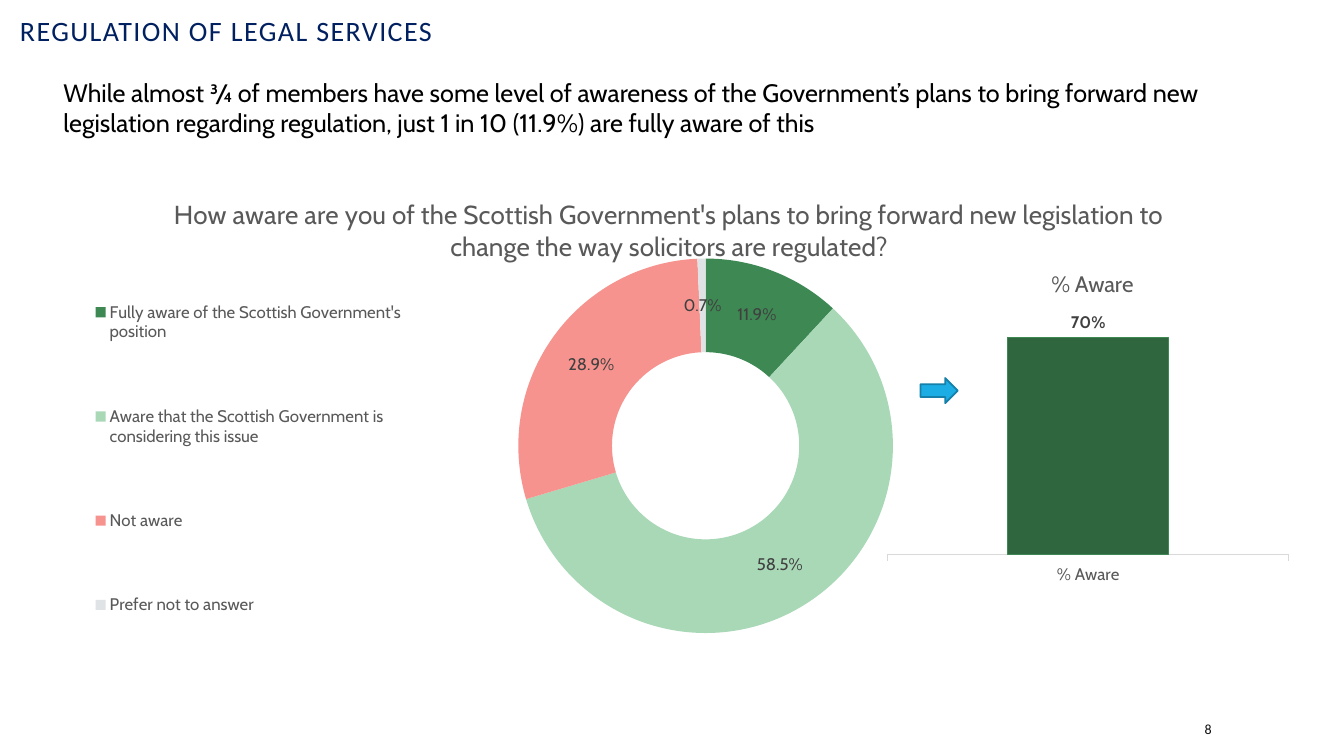
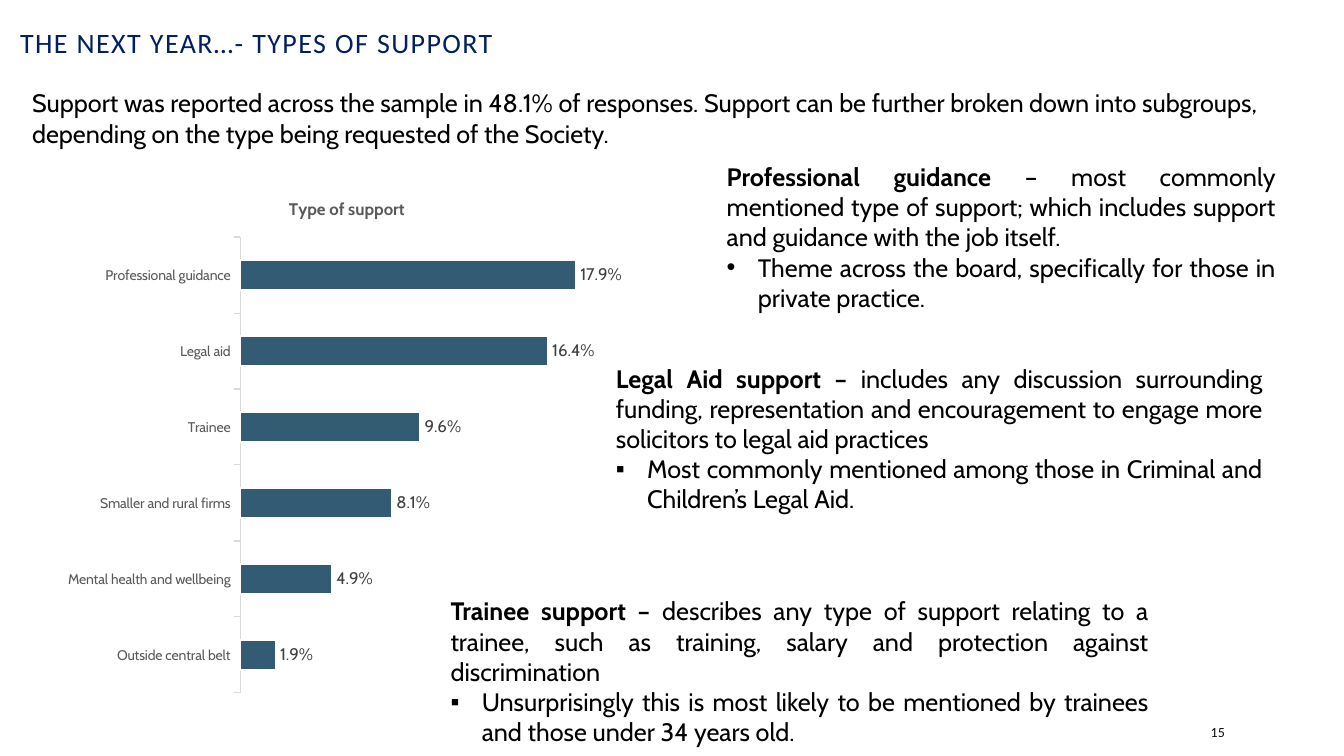
from lxml.etree import SubElement
from pptx import Presentation
from pptx.chart.data import CategoryChartData
from pptx.dml.color import RGBColor
from pptx.enum.chart import XL_CHART_TYPE, XL_LABEL_POSITION, XL_LEGEND_POSITION, XL_TICK_MARK
from pptx.enum.shapes import MSO_SHAPE
from pptx.enum.text import MSO_ANCHOR, PP_ALIGN
from pptx.oxml import parse_xml
from pptx.oxml.ns import nsdecls, qn
from pptx.util import Inches, Pt

NAVY = "002060"
BLACK = "000000"
NEAR_BLACK = "0D0D0D"
GREY = "595959"
LABEL_GREY = "404040"
AXIS_GREY = "D9D9D9"
GREEN = "3E8853"
DARK_GREEN = "2F663E"
PALE_GREEN = "A9D8B7"
CORAL = "F6938E"
PALE_GREY = "DFE3E5"
STEEL = "335B74"
SKY = "1CADE4"
DARK_SKY = "1580A9"
WHITE = "FFFFFF"

TITLE_STYLE = {"name": "Calibri", "size": Pt(20), "color": NAVY}
BODY_STYLE = {"name": "Cabin", "size": Pt(18), "color": BLACK}
NUMBER_STYLE = {"name": "Calibri", "size": Pt(10), "color": NEAR_BLACK}
INDENT = Inches(0.31)


def rgb(value):
    return RGBColor.from_string(value)


def apply_font(font, style):
    for attribute, value in style.items():
        if attribute == "color":
            font.color.rgb = rgb(value)
        else:
            setattr(font, attribute, value)


def chart_style(size, color=GREY, bold=False):
    return {"name": "Cabin", "size": Pt(size), "color": color, "bold": bold}


def paint(target, fill, line=None, width=0.75):
    target.fill.solid()
    target.fill.fore_color.rgb = rgb(fill)
    if line:
        target.line.color.rgb = rgb(line)
        target.line.width = Pt(width)


def add_text_box(slide, box, anchor=MSO_ANCHOR.TOP):
    frame = slide.shapes.add_textbox(*map(Inches, box)).text_frame
    frame.word_wrap = True
    frame.vertical_anchor = anchor
    return frame


def add_run(paragraph, text, style):
    run = paragraph.add_run()
    run.text = text
    apply_font(run.font, style)
    return run


def add_title(slide, text, box):
    paragraph = add_text_box(slide, box, MSO_ANCHOR.MIDDLE).paragraphs[0]
    paragraph.line_spacing = 0.8
    run = add_run(paragraph, text, TITLE_STYLE)
    run._r.get_or_add_rPr().set("spc", "100")


def add_summary(slide, text, box):
    add_run(add_text_box(slide, box).paragraphs[0], text, BODY_STYLE)


def add_number(slide, text, left, top):
    frame = add_text_box(slide, (left, top, 1.06, 0.3), MSO_ANCHOR.MIDDLE)
    add_run(frame.paragraphs[0], text, NUMBER_STYLE)


def add_theme(slide, box, heading, description, bullet, detail):
    frame = add_text_box(slide, box)
    intro = frame.paragraphs[0]
    add_run(intro, heading, {**BODY_STYLE, "bold": True})
    add_run(intro, description, BODY_STYLE)
    item = frame.add_paragraph()
    properties = item._p.get_or_add_pPr()
    properties.set("marL", str(INDENT))
    properties.set("indent", str(-INDENT))
    SubElement(properties, qn("a:buFont")).set("typeface", "Arial")
    SubElement(properties, qn("a:buChar")).set("char", bullet)
    add_run(item, detail, BODY_STYLE)
    for paragraph in frame.paragraphs:
        paragraph.alignment = PP_ALIGN.JUSTIFY


def set_layout(element, index, inner=False, **values):
    for layout in element.findall(qn("c:layout")):
        element.remove(layout)
    target = '<c:layoutTarget val="inner"/>' if inner else ""
    modes = '<c:xMode val="edge"/><c:yMode val="edge"/>'
    sizes = "".join(f'<c:{key} val="{value}"/>' for key, value in values.items())
    element.insert(index, parse_xml(
        f'<c:layout {nsdecls("c")}><c:manualLayout>{target}{modes}{sizes}'
        "</c:manualLayout></c:layout>"))


def add_chart(slide, kind, box, series_name, values, title, title_style, plot_layout, number_format):
    data = CategoryChartData(number_format=number_format)
    data.categories = list(values)
    data.add_series(series_name, list(values.values()))
    chart = slide.shapes.add_chart(kind, *map(Inches, box), data).chart
    apply_font(chart.font, chart_style(10, BLACK))
    chart.has_legend = False
    chart.has_title = True
    paragraph = chart.chart_title.text_frame.paragraphs[0]
    add_run(paragraph, title, title_style)
    left, top, width, height = plot_layout
    set_layout(chart._chartSpace.chart.plotArea, 0, inner=True, x=left, y=top, w=width, h=height)
    return chart


def add_labels(plot, number_format, bold=False, position=None):
    plot.has_data_labels = True
    labels = plot.data_labels
    settings = {"show_value": True, "show_percentage": False,
                "number_format": number_format, "number_format_is_linked": False}
    if position is not None:
        settings["position"] = position
    for attribute, value in settings.items():
        setattr(labels, attribute, value)
    apply_font(labels.font, chart_style(12, LABEL_GREY, bold))


def format_bars(chart, maximum, axis_size, fill, line, line_width):
    category_axis, value_axis = chart.category_axis, chart.value_axis
    value_axis.minimum_scale = 0
    value_axis.maximum_scale = maximum
    value_axis.has_major_gridlines = False
    value_axis.visible = False
    category_axis.has_major_gridlines = False
    category_axis.major_tick_mark = XL_TICK_MARK.OUTSIDE
    apply_font(category_axis.tick_labels.font, chart_style(axis_size))
    category_axis.format.line.color.rgb = rgb(AXIS_GREY)
    category_axis.format.line.width = Pt(0.75)
    plot = chart.plots[0]
    plot.gap_width = 150
    plot.vary_by_categories = False
    paint(plot.series[0].format, fill, line, line_width)


def add_awareness_doughnut(slide):
    values = {
        "Fully aware of the Scottish Government's position": 0.119,
        "Aware that the Scottish Government is considering this issue": 0.585,
        "Not aware": 0.289,
        "Prefer not to answer": 0.007,
    }
    chart = add_chart(
        slide, XL_CHART_TYPE.DOUGHNUT, (0.1, 1.7, 13.14, 5.09), "Series 1", values,
        "How aware are you of the Scottish Government's plans to bring forward "
        "new legislation to change the way solicitors are regulated?",
        chart_style(18.6), (0.34, 0.17, 0.37, 0.73), "0.0%")
    set_layout(chart.chart_title._element, 1, x=0.12, y=0.04)
    chart.has_legend = True
    legend = chart.legend
    legend.position = XL_LEGEND_POSITION.BOTTOM
    legend.include_in_layout = False
    apply_font(legend.font, chart_style(12))
    set_layout(legend._element, 1, x=0.05, y=0.13, w=0.26, h=0.86)
    plot = chart.plots[0]
    plot.vary_by_categories = True
    for index, color in enumerate((GREEN, PALE_GREEN, CORAL, PALE_GREY)):
        paint(plot.series[0].points[index].format, color)
    add_labels(plot, "0.0%")


def add_aware_column(slide):
    chart = add_chart(
        slide, XL_CHART_TYPE.COLUMN_CLUSTERED, (8.76, 2.51, 4.15, 3.29), "% Aware",
        {"% Aware": 0.7}, "% Aware", chart_style(16), (0.01, 0.16, 0.96, 0.75), "0%")
    format_bars(chart, 0.8, 12, DARK_GREEN, GREEN, 0.75)
    add_labels(chart.plots[0], "0%", bold=True)


def add_support_bars(slide):
    values = {
        "Outside central belt": 0.019,
        "Mental health and wellbeing": 0.049,
        "Smaller and rural firms": 0.081,
        "Trainee": 0.096,
        "Legal aid": 0.164,
        "Professional guidance": 0.179,
    }
    chart = add_chart(
        slide, XL_CHART_TYPE.BAR_CLUSTERED, (0.58, 1.78, 5.64, 5.2), "Series 1", values,
        "Type of support", chart_style(12, bold=True), (0.32, 0.11, 0.66, 0.87), "0.0%")
    set_layout(chart.chart_title._element, 1, x=0.4, y=0.03)
    format_bars(chart, 0.2, 10, STEEL, WHITE, 1.5)
    add_labels(chart.plots[0], "0.0%", position=XL_LABEL_POSITION.OUTSIDE_END)


def add_arrow(slide, box):
    arrow = slide.shapes.add_shape(MSO_SHAPE.RIGHT_ARROW, *map(Inches, box))
    arrow.shadow.inherit = False
    paint(arrow, SKY, DARK_SKY, 1.25)


def build_regulation(slide):
    add_awareness_doughnut(slide)
    add_title(slide, "REGULATION OF LEGAL SERVICES", (0.1, 0.11, 7.07, 0.45))
    add_number(slide, "8", 11.85, 7.08)
    add_summary(
        slide,
        "While almost ¾ of members have some level of awareness of the Government’s plans to "
        "bring forward new legislation regarding regulation, just 1 in 10 (11.9%) are fully "
        "aware of this", (0.53, 0.72, 12.38, 0.71))
    add_aware_column(slide)
    add_arrow(slide, (9.13, 3.75, 0.37, 0.25))


def build_support(slide):
    add_title(slide, "THE NEXT YEAR…- TYPES OF SUPPORT", (0.1, 0.08, 12.99, 0.74))
    add_number(slide, "15", 11.91, 7.11)
    add_summary(
        slide,
        "Support was reported across the sample in 48.1% of responses. Support can be further "
        "broken down into subgroups, depending on the type being requested of the Society.",
        (0.22, 0.82, 12.76, 0.71))
    add_support_bars(slide)
    themes = [
        ((7.11, 1.55, 5.64, 1.62), "Professional guidance ",
         "– most commonly mentioned type of support; which includes support and guidance "
         "with the job itself. ", "•",
         "Theme across the board, specifically for those in private practice."),
        ((6.01, 3.55, 6.61, 1.62), "Legal Aid support – ",
         "includes any discussion surrounding funding, representation and encouragement to "
         "engage more solicitors to legal aid practices", "▪",
         "Most commonly mentioned among those in Criminal and Children’s Legal Aid."),
        ((4.37, 5.86, 7.12, 1.31), "Trainee support – ",
         "describes any type of support relating to a trainee, such as training, salary and "
         "protection against discrimination", "▪",
         "Unsurprisingly this is most likely to be mentioned by trainees and those under "
         "34 years old."),
    ]
    for theme in themes:
        add_theme(slide, *theme)


def main():
    presentation = Presentation()
    presentation.slide_width = Inches(13.33)
    presentation.slide_height = Inches(7.5)
    for build in (build_regulation, build_support):
        build(presentation.slides.add_slide(presentation.slide_layouts[6]))
    presentation.save("out.pptx")


if __name__ == "__main__":
    main()
